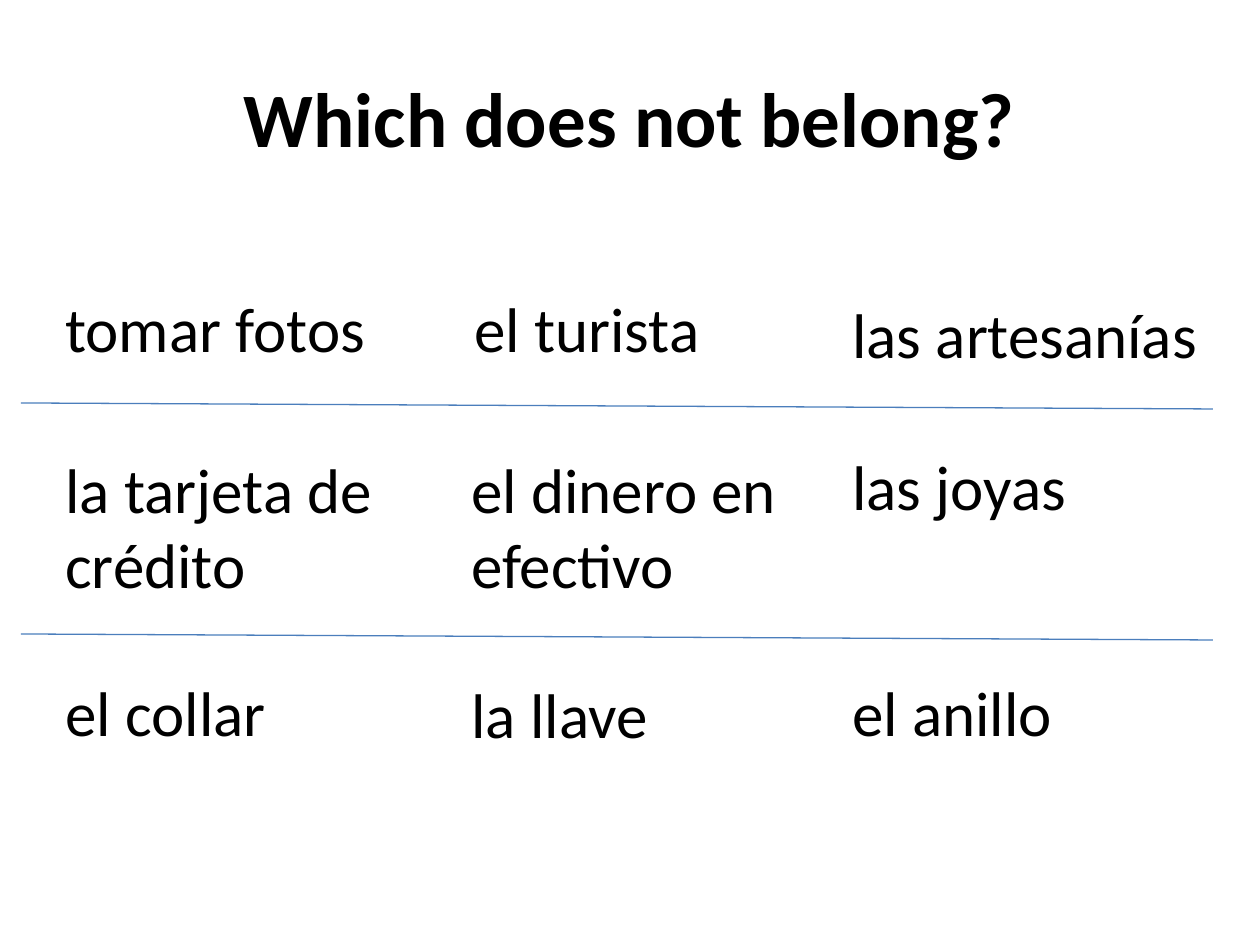
from lxml import etree
from pptx import Presentation
from pptx import util as u
from pptx.dml.color import RGBColor
from pptx.enum import shapes, text
from pptx.oxml.ns import qn

# Content: (lines, left, top, width) in px for each phrase, row by row
TITLE = "Which does not belong?"
COLUMNS = (53, 459, 840)
ROWS = [
    [(["tomar fotos"], COLUMNS[0], 283, 328),
     (["el turista"], COLUMNS[1] + 3, 283, 252),
     (["las artesanías"], COLUMNS[2], 289, 373)],
    [(["la tarjeta de", "crédito"], COLUMNS[0], 444, 349),
     (["el dinero en", "efectivo"], COLUMNS[1], 444, 343),
     (["las joyas"], COLUMNS[2], 441, 242)],
    [(["el collar"], COLUMNS[0], 667, 228),
     (["la llave"], COLUMNS[1], 669, 203),
     (["el anillo"], COLUMNS[2], 667, 227)],
]
DIVIDER_TOPS = (403, 634)
DIVIDER_LEFT, DIVIDER_RIGHT, DIVIDER_DROP = 21, 1213, 6

BLACK = RGBColor(0x00, 0x00, 0x00)
BLUE = RGBColor(0x4B, 0x7E, 0xBC)
FONT = "Calibri"
PX = u.Inches(1) / 126


def px(value):
    return u.Emu(round(value * PX))


def add_text(slide, lines, box, size, bold=False, wrap=False,
             align=text.PP_ALIGN.LEFT, anchor=text.MSO_ANCHOR.TOP):
    frame = slide.shapes.add_textbox(*map(px, box)).text_frame
    frame.word_wrap = wrap
    frame.vertical_anchor = anchor
    for index, line in enumerate(lines):
        paragraph = frame.add_paragraph() if index else frame.paragraphs[0]
        paragraph.alignment = align
        run = paragraph.add_run()
        run.text = line
        run.font.name = FONT
        run.font.size = u.Pt(size)
        run.font.bold = bold
        run.font.color.rgb = BLACK
    return frame


presentation = Presentation()
presentation.slide_width, presentation.slide_height = px(1260), px(945)
slide = presentation.slides.add_slide(presentation.slide_layouts[6])

# Title
add_text(slide, [TITLE], (63, 38, 1134, 157), 44, bold=True, wrap=True,
         align=text.PP_ALIGN.CENTER, anchor=text.MSO_ANCHOR.MIDDLE)

# Phrases
for row in ROWS:
    for lines, left, top, width in row:
        height = 14 + 75.5 * len(lines)
        frame = add_text(slide, lines, (left, top, width, height), 36)
        frame.auto_size = text.MSO_AUTO_SIZE.SHAPE_TO_FIT_TEXT

# Dividers between the rows
for top in DIVIDER_TOPS:
    divider = slide.shapes.add_connector(
        shapes.MSO_CONNECTOR.STRAIGHT, px(DIVIDER_LEFT), px(top),
        px(DIVIDER_RIGHT), px(top + DIVIDER_DROP))
    divider.line.color.rgb = BLUE
    divider.line.width = u.Pt(0.75)
    etree.SubElement(divider.element.spPr, qn("a:effectLst"))

presentation.save("out.pptx")
